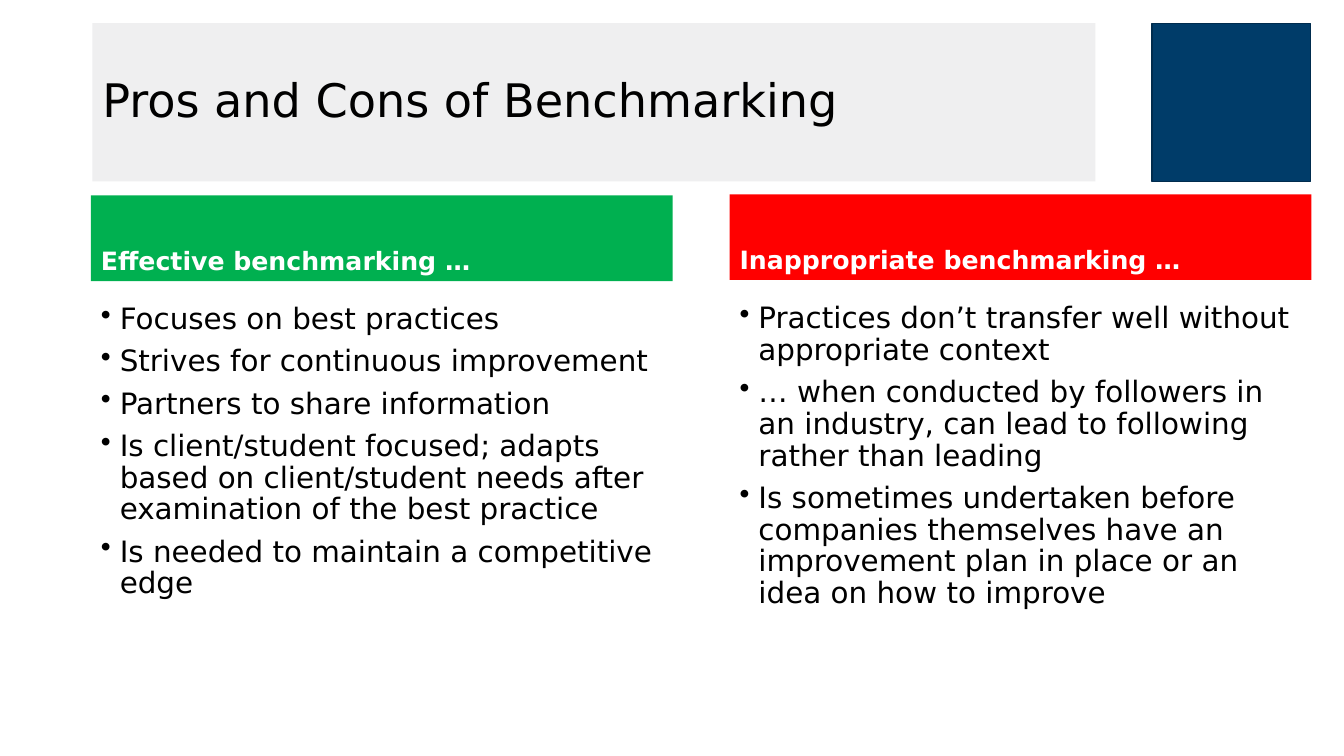
from dataclasses import dataclass

import pptx
import pptx.dml.color
import pptx.enum.shapes
import pptx.enum.text
import pptx.oxml
import pptx.oxml.ns
import pptx.util

Pt = pptx.util.Pt
Anchor = pptx.enum.text.MSO_ANCHOR

FONT = "DejaVu Sans"
COLUMN_WIDTH = 415.5
HEADING_HEIGHT = 61.2
POINTS_OFFSET = 74.2
POINTS_HEIGHT = 282.2
BULLET_INDENT = 13.5
BAND_TOP, BAND_HEIGHT = 16.6, 113


@dataclass
class Column:
    left: float
    top: float
    color: str
    heading: str
    points: list[str]


@dataclass
class TextStyle:
    size: float
    color: str = "000000"
    bold: bool = False
    bullet: bool = False
    anchor: Anchor = Anchor.TOP


TITLE = TextStyle(33, anchor=Anchor.MIDDLE)
HEADING = TextStyle(18, "FFFFFF", bold=True, anchor=Anchor.BOTTOM)
POINT = TextStyle(21, bullet=True)

COLUMNS = [
    Column(65, 139.6, "00B050", "Effective benchmarking …", [
        "Focuses on best practices",
        "Strives for continuous improvement",
        "Partners to share information",
        "Is client/student focused; adapts based on client/student needs "
        "after examination of the best practice",
        "Is needed to maintain a competitive edge",
    ]),
    Column(521.2, 138.8, "FF0000", "Inappropriate benchmarking …", [
        "Practices don’t transfer well without appropriate context",
        "… when conducted by followers in an industry, can lead to following "
        "rather than leading",
        "Is sometimes undertaken before companies themselves have an "
        "improvement plan in place or an idea on how to improve",
    ]),
]


def rgb(color: str) -> pptx.dml.color.RGBColor:
    return pptx.dml.color.RGBColor.from_string(color)


def add_bullet(paragraph) -> None:
    properties = paragraph._p.get_or_add_pPr()
    properties.set("marL", str(Pt(BULLET_INDENT)))
    properties.set("indent", str(-Pt(BULLET_INDENT)))
    bullet = pptx.oxml.parse_xml(
        f'<a:buChar {pptx.oxml.ns.nsdecls("a")} char="•"/>')
    properties.append(bullet)


def add_text(slide, left: float, top: float, width: float, height: float,
             lines: list[str], style: TextStyle, fill: str | None = None) -> None:
    box = slide.shapes.add_textbox(Pt(left), Pt(top), Pt(width), Pt(height))
    if fill:
        box.fill.solid()
        box.fill.fore_color.rgb = rgb(fill)
    frame = box.text_frame
    frame.word_wrap = True
    frame.vertical_anchor = style.anchor
    for index, line in enumerate(lines):
        paragraph = frame.add_paragraph() if index else frame.paragraphs[0]
        paragraph.text = line
        if style.bullet:
            add_bullet(paragraph)
        paragraph.line_spacing = 0.9
        if index:
            paragraph.space_before = Pt(7.5)
        paragraph.font.name = FONT
        paragraph.font.size = Pt(style.size)
        paragraph.font.bold = style.bold
        paragraph.font.color.rgb = rgb(style.color)


def add_corner_square(slide) -> None:
    square = slide.shapes.add_shape(
        pptx.enum.shapes.MSO_SHAPE.RECTANGLE,
        Pt(823), Pt(BAND_TOP), Pt(BAND_HEIGHT), Pt(BAND_HEIGHT))
    square.shadow.inherit = False
    square.fill.solid()
    square.fill.fore_color.rgb = rgb("003C69")
    square.line.color.rgb = rgb("002C4E")
    square.line.width = Pt(1)


def add_column(slide, column: Column) -> None:
    add_text(slide, column.left, column.top, COLUMN_WIDTH, HEADING_HEIGHT,
             [column.heading], HEADING, column.color)
    add_text(slide, column.left, column.top + POINTS_OFFSET, COLUMN_WIDTH,
             POINTS_HEIGHT, column.points, POINT)


def main() -> None:
    presentation = pptx.Presentation()
    presentation.slide_width = Pt(960)
    presentation.slide_height = Pt(540)
    slide = presentation.slides.add_slide(presentation.slide_layouts[6])
    add_corner_square(slide)
    add_text(slide, 66, BAND_TOP, 716.4, BAND_HEIGHT,
             ["Pros and Cons of Benchmarking"], TITLE, "EFEFF0")
    for column in COLUMNS:
        add_column(slide, column)
    presentation.save("out.pptx")


if __name__ == "__main__":
    main()
